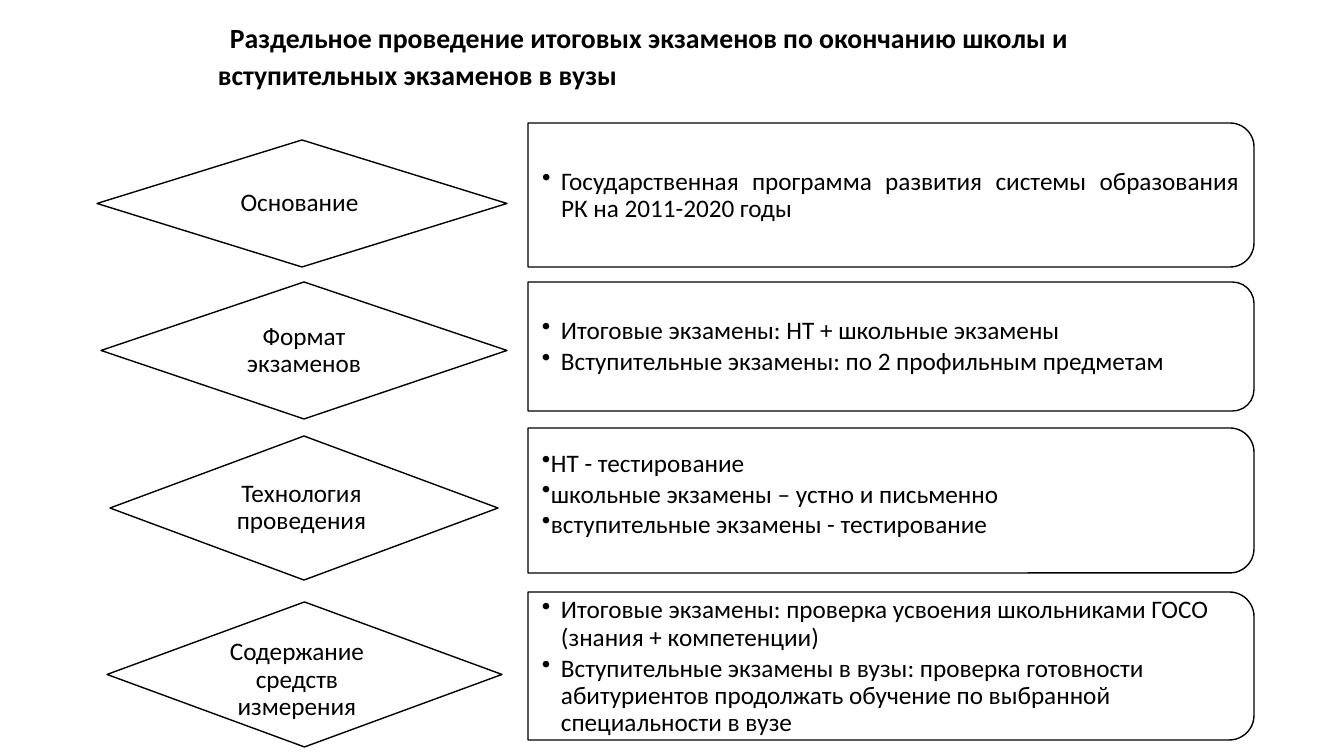
from lxml import etree
from pptx import Presentation
from pptx import util as u
from pptx.dml.color import RGBColor
from pptx.enum import shapes, text
from pptx.oxml.ns import qn

BLACK = RGBColor(0x00, 0x00, 0x00)
WHITE = RGBColor(0xFF, 0xFF, 0xFF)
PX = 914400 / 100.8
INDENT = 19


def px(n):
    return u.Emu(round(n * PX))


def add_text(p, words, size=18, bold=False, font="Calibri", color=BLACK,
             align=text.PP_ALIGN.LEFT, spacing=0.9, after=0):
    p.alignment, p.line_spacing, p.space_after = align, spacing, u.Pt(after)
    r = p.add_run()
    r.text = words
    r.font.name, r.font.size, r.font.bold = font, u.Pt(size), bold
    r.font.color.rgb = color


def set_indent(p, left, first):
    pPr = p._p.get_or_add_pPr()
    pPr.set("marL", str(px(left)))
    pPr.set("indent", str(px(first)))
    return pPr


class Deck:
    """Holds the slide style and the current slide."""

    def __init__(self, width, height):
        self.prs = Presentation()
        self.prs.slide_width, self.prs.slide_height = px(width), px(height)
        self.s = self.prs.slides.add_slide(self.prs.slide_layouts[6])

    def shape(self, kind, x, y, w, h):
        sp = self.s.shapes.add_shape(kind, px(x), px(y), px(w), px(h))
        sp.shadow.inherit = False
        sp.fill.solid()
        sp.fill.fore_color.rgb = WHITE
        sp.line.color.rgb = BLACK
        sp.line.width = u.Pt(1)
        return sp

    def frame(self, sp, insets, anchor=text.MSO_ANCHOR.MIDDLE):
        tf = sp.text_frame
        tf.word_wrap = True
        tf.vertical_anchor = anchor
        (tf.margin_left, tf.margin_top,
         tf.margin_right, tf.margin_bottom) = map(px, insets)
        return tf

    def textbox(self, x, y, w, h, insets, **kw):
        sp = self.s.shapes.add_textbox(px(x), px(y), px(w), px(h))
        return self.frame(sp, insets, **kw)

    def title(self, words, x, y, w, h):
        tf = self.textbox(x, y, w, h, (10, 0, 10, 0), anchor=text.MSO_ANCHOR.TOP)
        p = tf.paragraphs[0]
        set_indent(p, 0, 12)
        add_text(p, words, size=19.8, bold=True, spacing=u.Pt(26))

    def diamond(self, label, x, y, w, h, insets=(1, 1, 1, 1)):
        sp = self.shape(shapes.MSO_SHAPE.DIAMOND, x, y, w, h)
        tf = self.frame(sp, insets)
        add_text(tf.paragraphs[0], label, align=text.PP_ALIGN.CENTER)

    def panel(self, y, h):
        # Turned a quarter so that the rounded corners face right
        x, w = 528, 726
        sp = self.shape(shapes.MSO_SHAPE.ROUND_2_SAME_RECTANGLE,
                        x + (w - h) / 2, y + (h - w) / 2, h, w)
        sp.rotation = 90

    def bullets(self, items, y, h, w=716, hang=INDENT, bottom=1, **fmt):
        tf = self.textbox(528, y, w, h, (14, 1, 1, bottom))
        for i, item in enumerate(items):
            p = tf.add_paragraph() if i else tf.paragraphs[0]
            add_text(p, item, **fmt)
            pPr = set_indent(p, hang, -hang)
            etree.SubElement(pPr, qn("a:buChar")).set("char", "•")


def main():
    d = Deck(1344, 756)
    d.title("Раздельное проведение итоговых экзаменов по окончанию школы и "
            "вступительных экзаменов в вузы", 208, 18, 953, 78)

    # Panels on the right
    for y, h in ((123, 144), (282, 129), (428, 145), (592, 148)):
        d.panel(y, h)

    # Bulleted answers
    d.bullets(["Государственная программа развития системы образования РК на "
               "2011-2020 годы"], 131, 129, w=712,
              align=text.PP_ALIGN.JUSTIFY, after=2.7)
    d.bullets(["Итоговые экзамены: НТ + школьные экзамены",
               "Вступительные экзамены: по 2 профильным предметам"],
              288, 117, after=2.7)
    d.bullets(["НТ - тестирование",
               "школьные экзамены – устно и письменно",
               "вступительные экзамены - тестирование"],
              435, 131, hang=0, bottom=16, spacing=1.0)
    d.bullets(["Итоговые экзамены: проверка усвоения школьниками ГОСО "
               "(знания + компетенции)",
               "Вступительные экзамены в вузы: проверка готовности абитуриентов "
               "продолжать обучение по выбранной специальности в вузе"],
              600, 134, after=2.7)

    # Diamonds on the left
    d.diamond("Основание", 97, 140, 410, 127, insets=(1, 1, 6, 1))
    d.diamond("Формат экзаменов", 101, 282, 406, 137)
    d.diamond("Технология проведения", 110, 436, 388, 144, insets=(1, 1, 6, 1))
    d.diamond("Содержание средств измерения", 107, 602, 395, 145,
              insets=(1, 12, 16, 1))

    d.prs.save("out.pptx")


if __name__ == "__main__":
    main()
